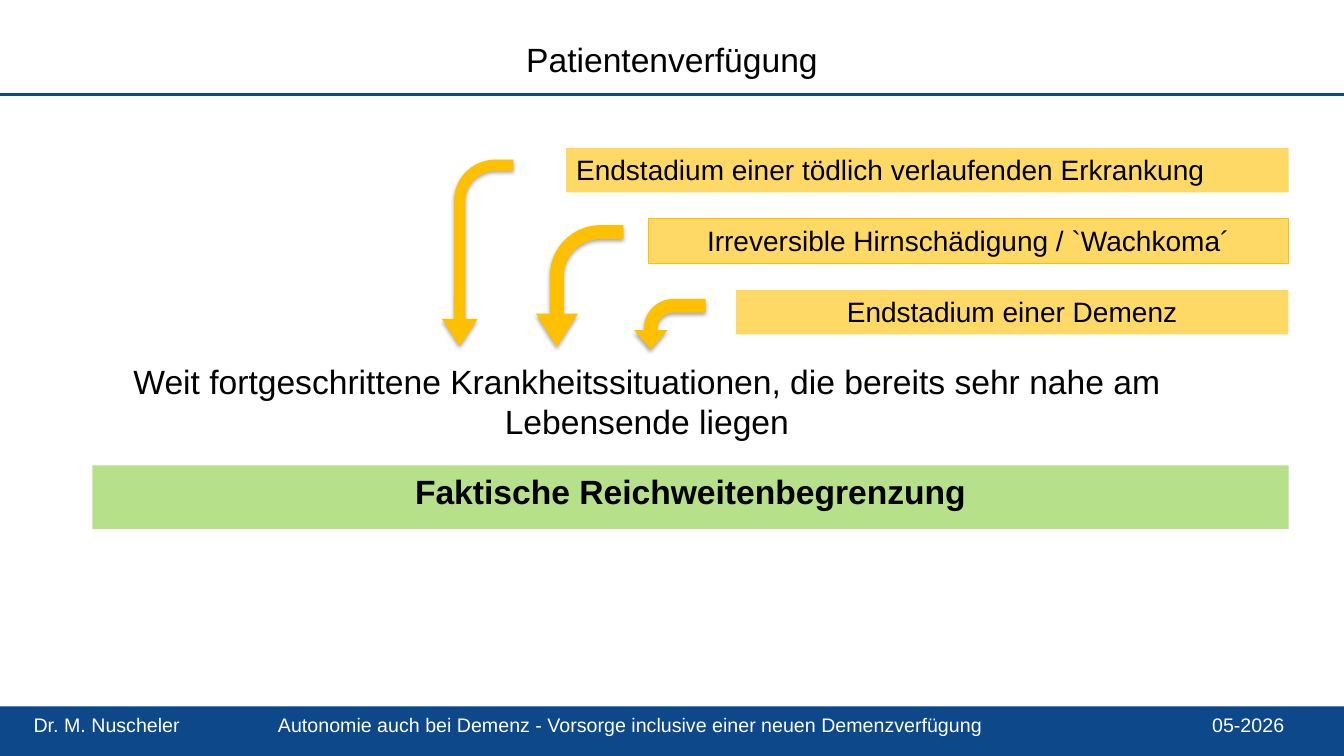
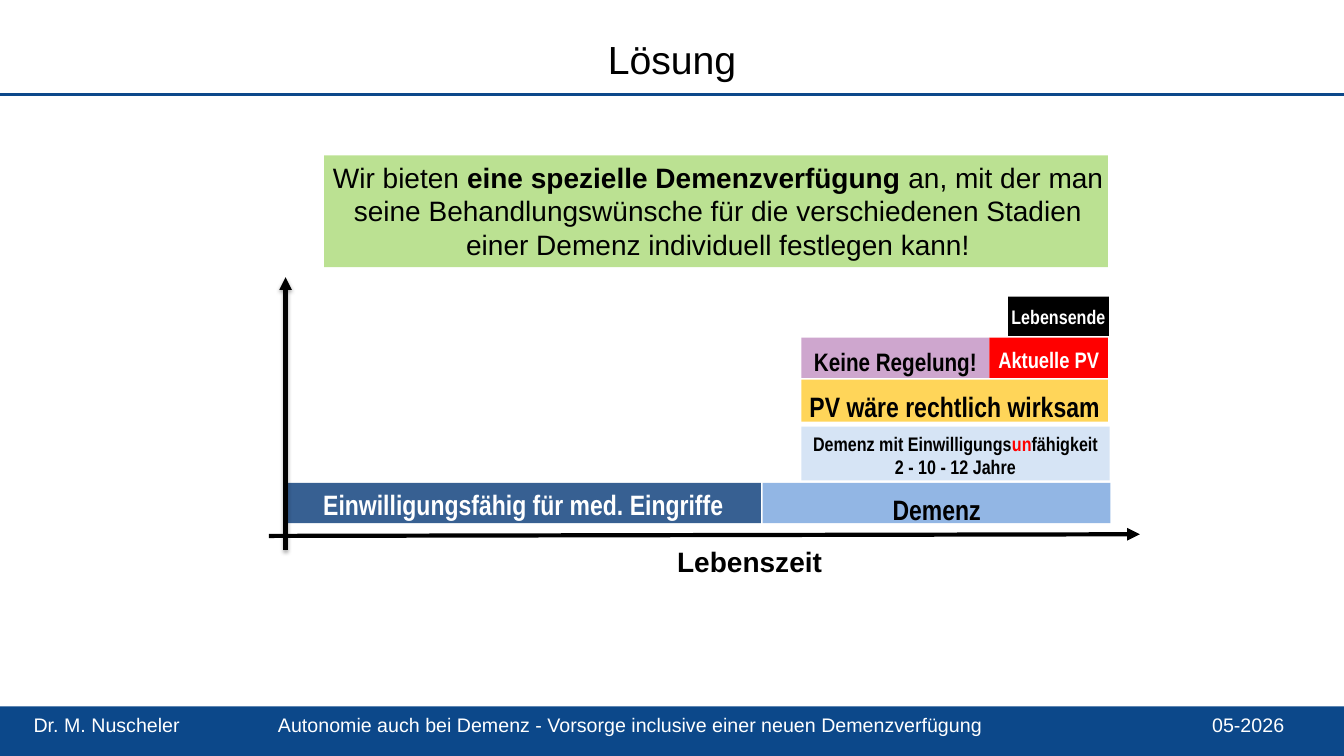
import pptx
import pptx.util
import pptx.dml.color
import pptx.enum.shapes
import pptx.enum.text
import pptx.oxml.ns
import lxml.etree

Pt = pptx.util.Pt
qn = pptx.oxml.ns.qn
MSO = pptx.enum.shapes.MSO_SHAPE
ALIGN = pptx.enum.text.PP_ALIGN
ANCHOR = pptx.enum.text.MSO_ANCHOR

WIDTH = pptx.util.Inches(13.33)
HEIGHT = pptx.util.Inches(7.5)
COLS, ROWS = 160, 90
COLORS = {
    "brand": "0C488A", "black": "000000", "white": "FFFFFF", "red": "FF0000",
    "amber": "FFC000", "green": "92D050", "navy": "376092", "blue": "558ED5",
    "pale": "C6D9F1", "purple": "B070B0",
}


def rgb(name):
    return pptx.dml.color.RGBColor.from_string(COLORS[name])


def col(n):
    return round(WIDTH * n / COLS)


def row(n):
    return round(HEIGHT * n / ROWS)


def place(box, x, y, w, h):
    return col(box[0] + x), row(box[1] + y), col(w), row(h)


def child(parent, tag, **attrs):
    return lxml.etree.SubElement(parent, qn(tag), attrs)


def add_shadow(effects, alpha, dist):
    shadow = child(effects, "a:outerShdw", blurRad=str(Pt(3.1)), dist=str(Pt(dist)),
                   dir="5400000", rotWithShape="0")
    clr = child(shadow, "a:srgbClr", val=COLORS["black"])
    child(clr, "a:alpha", val=str(alpha * 1000))


def write(sp, paragraphs, size, color="black", bold=False, font="Arial",
          align=ALIGN.CENTER, spacing=None, insets=(0.1, 0.05)):
    tf = sp.text_frame
    tf.word_wrap = True
    tf.vertical_anchor = ANCHOR.TOP
    tf.margin_left = tf.margin_right = pptx.util.Inches(insets[0])
    tf.margin_top = tf.margin_bottom = pptx.util.Inches(insets[1])
    for i, runs in enumerate(paragraphs):
        p = tf.paragraphs[0] if i == 0 else tf.add_paragraph()
        p.alignment = align
        if spacing:
            p.line_spacing = spacing
        p.font.name, p.font.size, p.font.bold = font, Pt(size), bold
        p.font.color.rgb = rgb(color)
        for text, style in runs:
            r = p.add_run()
            r.text = text
            if "bold" in style:
                r.font.bold = style["bold"]
            if "color" in style:
                r.font.color.rgb = rgb(style["color"])


def plain(text):
    return [[(text, {})]]


def add_block(slide, pos, fill, alpha=100, kind=MSO.RECTANGLE, border=None):
    sp = slide.shapes.add_shape(kind, *pos)
    sp.shadow.inherit = False
    sp.fill.solid()
    sp.fill.fore_color.rgb = rgb(fill)
    if alpha < 100:
        clr = sp.element.spPr.find(".//" + qn("a:srgbClr"))
        child(clr, "a:alpha", val=str(alpha * 1000))
    if border:
        sp.line.color.rgb = rgb(border)
        sp.line.width = Pt(0.75)
    else:
        sp.line.fill.background()
    return sp


def add_line(slide, start, end, color, width, arrow=False, shadow=False):
    line = slide.shapes.add_connector(
        pptx.enum.shapes.MSO_CONNECTOR.STRAIGHT,
        col(start[0]), row(start[1]), col(end[0]), row(end[1]))
    line.line.color.rgb = rgb(color)
    line.line.width = Pt(width)
    spPr = line.element.spPr
    if arrow:
        child(spPr.find(qn("a:ln")), "a:tailEnd", type="triangle")
    effects = child(spPr, "a:effectLst")
    if shadow:
        add_shadow(effects, 38, 1.6)
    return line


def add_bent_arrow(slide, box, x, y, w, h, adjustments):
    left, top, width, height = place(box, x, y, w, h)
    shift = (width - height) // 2
    sp = add_block(slide, (left + shift, top - shift, height, width),
                   "amber", kind=MSO.BENT_ARROW)
    for i, value in enumerate(adjustments):
        sp.adjustments[i] = value
    sp.rotation = 270
    sp.element.spPr.find(qn("a:xfrm")).set("flipH", "1")
    add_shadow(sp.element.spPr.find(qn("a:effectLst")), 35, 1.8)


def dress_layout(layout, slide):
    band = add_block(slide, place((0, 84.1), 0, 0, COLS, ROWS - 84.1), "brand")
    p = band.text_frame.paragraphs[0]
    tabs = child(p._p.get_or_add_pPr(), "a:tabLst")
    for pos, algn in ((29.1, "l"), (148.9, "r")):
        child(tabs, "a:tab", pos=str(col(pos)), algn=algn)
    write(band, plain("Dr. M. Nuscheler\tAutonomie auch bei Demenz - Vorsorge inclusive "
                      "einer neuen Demenzverfügung\t05-2026"),
          14, "white", align=ALIGN.LEFT, insets=(0.12, 0.06))
    band.text_frame.margin_left = col(4)
    rule = add_line(slide, (0, 11.25), (COLS, 11.25), "brand", 2.25)
    for sp in (band, rule):
        layout.shapes.element.append(sp.element)


def set_title(slide, text, size):
    sp = slide.shapes.title
    sp.left, sp.top, sp.width, sp.height = place((0, 3.6), 0, 0, COLS, 6.8)
    write(sp, plain(text), size)
    sp.text_frame.vertical_anchor = ANCHOR.MIDDLE


def draw_situations(slide, box):
    width = box[2]
    labels = (
        ("Endstadium einer tödlich verlaufenden Erkrankung", 86, ALIGN.LEFT, None),
        ("Irreversible Hirnschädigung / `Wachkoma´", 76.2, ALIGN.CENTER, "amber"),
        ("Endstadium einer Demenz", 65.8, ALIGN.CENTER, None),
    )
    for i, (text, w, align, border) in enumerate(labels):
        sp = add_block(slide, place(box, width - w, 8.45 * i, w, 5.3),
                       "amber", 60, border=border)
        write(sp, plain(text), 20, align=align)

    statement = slide.shapes.add_textbox(*place(box, 0, 24.6, 132, 13.2))
    write(statement, plain("Weit fortgeschrittene Krankheitssituationen, die bereits "
                           "sehr nahe am Lebensende liegen"), 24, insets=(0.12, 0.06))
    limit = add_block(slide, place(box, 0, 37.8, width, 7.6), "green", 66)
    write(limit, plain("Faktische Reichweitenbegrenzung"), 24, bold=True,
          insets=(0.12, 0.06))

    arrows = (
        (41.6, 1.4, 8.5, 22.2, (0.16, 0.25)),
        (52.8, 9.2, 10.4, 14.5, (0.16, 0.24)),
        (64.5, 18, 8.5, 6, (0.27, 0.33)),
    )
    for x, y, w, h, head in arrows:
        add_bent_arrow(slide, box, x, y, w, h, head + (0.38, 0.58))


def draw_offer(slide, box):
    sp = add_block(slide, place(box, 0, 0, box[2], box[3]), "green", 62)
    write(sp, [[("Wir bieten ", {}),
                ("eine spezielle Demenzverfügung ", {"bold": True}),
                ("an, mit der man seine Behandlungswünsche für die verschiedenen "
                 "Stadien einer Demenz individuell festlegen kann!", {})]],
          20, insets=(0.04, 0.05))
    sp.text_frame.margin_right = 0


def draw_timeline(slide, box):
    incapable = [
        [("Demenz mit Einwilligungs", {}), ("un", {"color": "red"}), ("fähigkeit", {})],
        [("2 - 10 - 12 Jahre", {})],
    ]
    stages = (
        ((2, 24.5, 56.6, 4.8), "navy", 100,
         plain("Einwilligungsfähig für med. Eingriffe"), 20, "white", None, (0.1, 0.05)),
        ((58.8, 24.5, 41.4, 4.8), "blue", 64,
         plain("Demenz"), 20, "black", 1.15, (0.1, 0.05)),
        ((63.4, 17.8, 36.7, 6.4), "pale", 71, incapable, 14, "black", None, (0.1, 0.05)),
        ((63.4, 12.2, 36.5, 5), "amber", 65,
         plain("PV wäre rechtlich wirksam"), 20, "black", 1.15, (0.04, 0.05)),
        ((63.4, 7.2, 22.4, 4.8), "purple", 62,
         plain("Keine Regelung!"), 18, "black", 1.15, (0.08, 0.04)),
        ((85.8, 7.2, 14.1, 4.8), "red", 100,
         plain("Aktuelle PV"), 16, "white", 1.15, (0, 0.05)),
        ((88, 2.3, 12, 4.7), "black", 100,
         plain("Lebensende"), 14, "white", 1.15, (0, 0.05)),
    )
    for pos, fill, alpha, text, size, color, spacing, insets in stages:
        sp = add_block(slide, place(box, *pos), fill, alpha)
        write(sp, text, size, color, True, "Arial Narrow", spacing=spacing, insets=insets)

    x, y, w, h = box
    add_line(slide, (x, y + 30.8), (x + w, y + 30.6), "black", 3, arrow=True)
    add_line(slide, (x + 2, y + h), (x + 2, y), "black", 3, arrow=True, shadow=True)
    caption = slide.shapes.add_textbox(*place(box, 47, 31.2, 20.5, 5.3))
    write(caption, plain("Lebenszeit"), 20, bold=True)


def main():
    prs = pptx.Presentation()
    prs.slide_width, prs.slide_height = WIDTH, HEIGHT
    layout = prs.slide_layouts.get_by_name("Title Only")

    slide = prs.slides.add_slide(layout)
    dress_layout(layout, slide)
    set_title(slide, "Patientenverfügung", 24)
    draw_situations(slide, (11, 17.6, 142.4, 45.4))

    slide = prs.slides.add_slide(layout)
    set_title(slide, "Lösung", 28)
    draw_offer(slide, (38.6, 18.5, 93.3, 13.3))
    draw_timeline(slide, (32, 33, 103.7, 32.5))

    prs.save("out.pptx")


if __name__ == "__main__":
    main()
